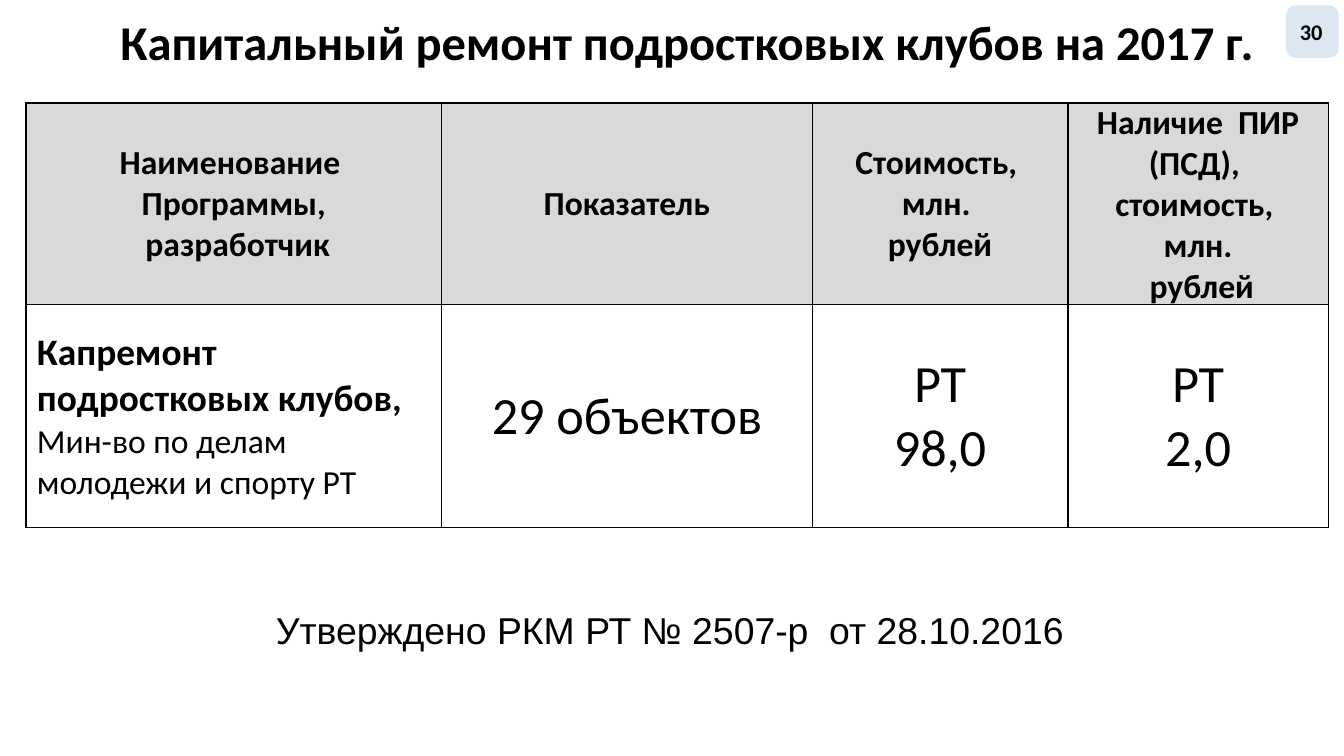
from dataclasses import dataclass

from lxml import etree
from pptx import Presentation
from pptx.dml.color import RGBColor
from pptx.enum.shapes import MSO_SHAPE
from pptx.enum.text import MSO_ANCHOR, MSO_AUTO_SIZE, PP_ALIGN
from pptx.oxml.ns import qn
from pptx.util import Emu, Pt

ROUNDED = MSO_SHAPE.ROUNDED_RECTANGLE
TOP, MIDDLE = MSO_ANCHOR.TOP, MSO_ANCHOR.MIDDLE
LEFT, CENTER = PP_ALIGN.LEFT, PP_ALIGN.CENTER
GROW = MSO_AUTO_SIZE.SHAPE_TO_FIT_TEXT
EMU_PER_PX = 4572
TITLE_ONLY = 5


@dataclass(frozen=True)
class Theme:
    ink: str = "000000"
    paper: str = "FFFFFF"
    header: str = "D9D9D9"
    badge: str = "DDE7F3"
    font: str = "Calibri"
    note_font: str = "Arial"
    small: int = 12
    body: int = 18
    lead: int = 20
    title: int = 26
    value: int = 28
    border: int = 1


THEME = Theme()


@dataclass(frozen=True)
class Line:
    text: str
    size: int
    bold: bool = False
    align: PP_ALIGN = CENTER
    font: str = THEME.font


@dataclass(frozen=True)
class CellSpec:
    lines: list[Line]
    fill: str = THEME.paper
    insets: tuple[int, int, int, int] = (2, 2, 2, 0)


def px(n: int) -> Emu:
    return Emu(n * EMU_PER_PX)


def rgb(color: str) -> RGBColor:
    return RGBColor.from_string(color)


def place(shape, left: int, top: int, width: int, height: int) -> None:
    shape.left, shape.top = px(left), px(top)
    shape.width, shape.height = px(width), px(height)


def write(tf, lines: list[Line]) -> None:
    tf.word_wrap = True
    for i, line in enumerate(lines):
        p = tf.paragraphs[0] if i == 0 else tf.add_paragraph()
        p.alignment = line.align
        r = p.add_run()
        r.text = line.text
        r.font.name = line.font
        r.font.size = Pt(line.size)
        r.font.bold = line.bold
        r.font.color.rgb = rgb(THEME.ink)


def set_insets(frame, left: int, top: int, right: int, bottom: int) -> None:
    frame.margin_left, frame.margin_top = px(left), px(top)
    frame.margin_right, frame.margin_bottom = px(right), px(bottom)


def draw_borders(cell) -> None:
    tc_pr = cell._tc.get_or_add_tcPr()
    for side in ("lnL", "lnR", "lnT", "lnB"):
        ln = etree.SubElement(tc_pr, qn(f"a:{side}"), w=str(Pt(THEME.border)))
        fill = etree.SubElement(ln, qn("a:solidFill"))
        etree.SubElement(fill, qn("a:srgbClr"), val=THEME.ink)


def draw_cell(cell, spec: CellSpec) -> None:
    draw_borders(cell)
    cell.fill.solid()
    cell.fill.fore_color.rgb = rgb(spec.fill)
    cell.vertical_anchor = MIDDLE
    set_insets(cell, *spec.insets)
    write(cell.text_frame, spec.lines)


def draw_table(s, left: int, top: int, widths: list[int], heights: list[int],
               rows: list[list[CellSpec]]) -> None:
    frame = s.shapes.add_table(len(heights), len(widths), px(left), px(top),
                               px(sum(widths)), px(sum(heights)))
    table = frame.table
    for column, width in zip(table.columns, widths):
        column.width = px(width)
    for row, height, specs in zip(table.rows, heights, rows):
        row.height = px(height)
        for cell, spec in zip(row.cells, specs):
            draw_cell(cell, spec)


def draw_badge(s, number: str) -> None:
    sp = s.shapes.add_shape(ROUNDED, px(1914), px(8), px(78), px(78))
    sp.shadow.inherit = False
    sp.fill.solid()
    sp.fill.fore_color.rgb = rgb(THEME.badge)
    sp.line.fill.background()
    tf = sp.text_frame
    tf.vertical_anchor = MIDDLE
    set_insets(tf, 16, 10, 20, 10)
    write(tf, [Line(number, THEME.small, True)])


def draw_title(s, text: str) -> None:
    sp = s.shapes.title
    place(sp, 134, 8, 1780, 108)
    tf = sp.text_frame
    tf.vertical_anchor = TOP
    tf.auto_size = GROW
    write(tf, [Line(text, THEME.title, True)])


def draw_note(s, text: str) -> None:
    tf = s.shapes.add_textbox(px(56), px(894), px(1898), px(88)).text_frame
    tf.auto_size = GROW
    write(tf, [Line(text, THEME.lead, font=THEME.note_font)])


def header(*texts: str) -> CellSpec:
    return CellSpec([Line(t, THEME.body, True) for t in texts],
                    THEME.header, (0, 0, 0, 0))


def value(*texts: str) -> CellSpec:
    return CellSpec([Line(t, THEME.value) for t in texts])


ROWS = [
    [
        header("Наименование ", "Программы,", " разработчик"),
        header("Показатель"),
        header("Стоимость, ", "млн. ", "рублей"),
        header("Наличие  ПИР (ПСД), ", "стоимость, ", "млн.", " рублей"),
    ],
    [
        CellSpec([
            Line("Капремонт подростковых клубов,", THEME.lead, True, LEFT),
            Line("Мин-во по делам молодежи и спорту РТ", THEME.body, align=LEFT),
        ], insets=(16, 2, 2, 0)),
        value("29 объектов"),
        value("РТ", "98,0"),
        value("РТ", "2,0"),
    ],
]


def main() -> None:
    prs = Presentation()
    prs.slide_width, prs.slide_height = px(2000), px(1125)
    s = prs.slides.add_slide(prs.slide_layouts[TITLE_ONLY])
    draw_badge(s, "30")
    draw_title(s, "Капитальный ремонт подростковых клубов на 2017 г.")
    draw_table(s, 39, 153, [618, 552, 380, 388], [252, 332], ROWS)
    draw_note(s, "Утверждено РКМ РТ № 2507-р  от 28.10.2016 ")
    prs.save("out.pptx")


if __name__ == "__main__":
    main()
